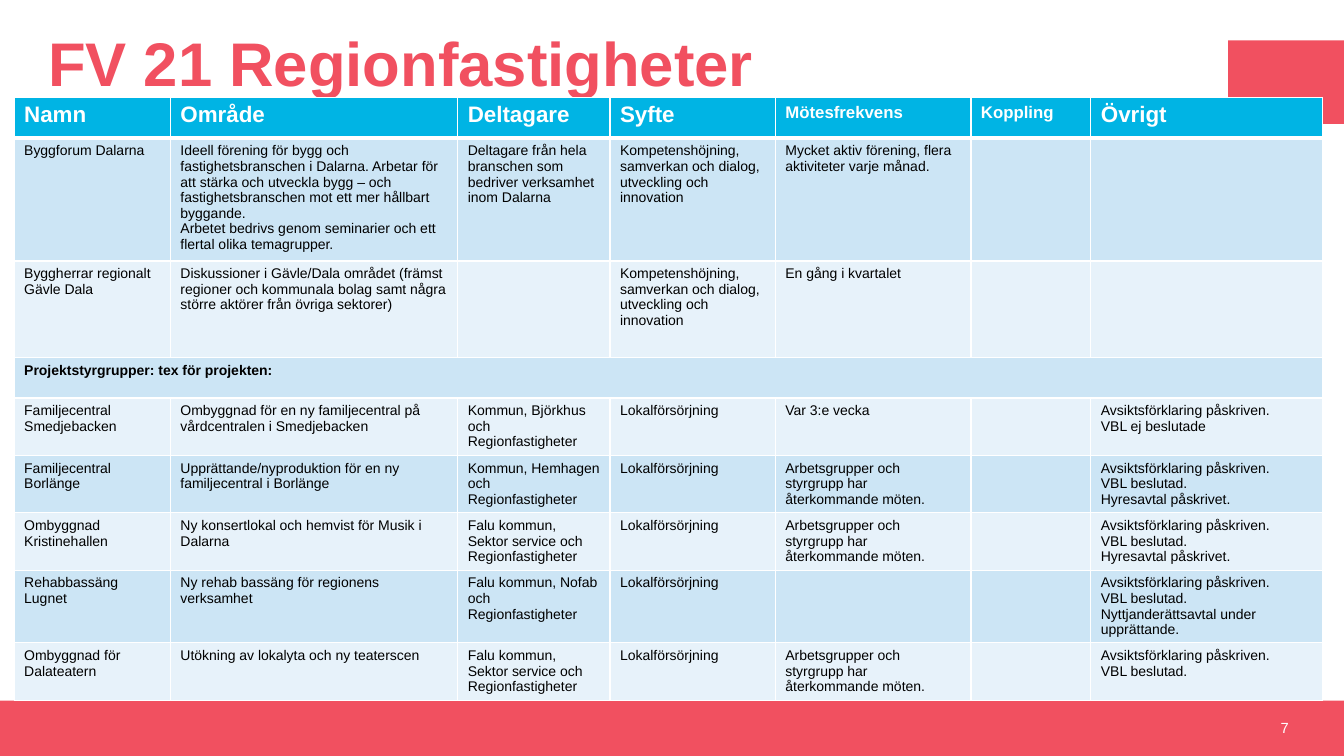
from dataclasses import dataclass
from typing import NamedTuple

from lxml.etree import SubElement
from pptx import Presentation
from pptx.dml.color import RGBColor
from pptx.enum.shapes import MSO_SHAPE
from pptx.enum.text import MSO_ANCHOR, PP_ALIGN
from pptx.oxml.ns import qn
from pptx.util import Inches, Pt


@dataclass(frozen=True)
class Theme:
    font: str = "Arial"
    coral: str = "F15060"
    header: str = "00B4E4"
    bands: tuple[str, str] = ("CCE5F5", "E7F2FA")
    white: str = "FFFFFF"
    black: str = "000000"
    title_size: float = 44
    header_size: float = 16
    small_header_size: float = 12
    body_size: float = 10
    number_size: float = 10.5


class Box(NamedTuple):
    left: float
    top: float
    width: float
    height: float

    def lengths(self) -> list:
        return [Inches(value) for value in self]


class Column(NamedTuple):
    heading: str
    width: float
    size: float


class Entry(NamedTuple):
    height: float
    texts: tuple[str, ...]
    is_section: bool = False


THEME = Theme()
SECTION_LABEL = "Projektstyrgrupper: tex för projekten:"
SKILLS = "Kompetenshöjning, samverkan och dialog, utveckling och innovation"
PREMISES = "Lokalförsörjning"
MEETINGS = "Arbetsgrupper och styrgrupp har återkommande möten."
SECTOR_SERVICE = "Falu kommun, Sektor service och Regionfastigheter"
SIGNED = "Avsiktsförklaring påskriven."
DECIDED = f"{SIGNED}\nVBL beslutad."
LEASED = f"{DECIDED}\nHyresavtal påskrivet."

BANDS = (Box(0, 6.95, 13.33, 0.55), Box(12.18, 0.4, 1.15, 0.83))
HEADER_HEIGHT = 0.4
PROJECT_HEIGHT = 0.57
PURPOSE_COLUMN = 3
COLUMNS = (
    Column("Namn", 1.55, THEME.header_size),
    Column("Område", 2.85, THEME.header_size),
    Column("Deltagare", 1.51, THEME.header_size),
    Column("Syfte", 1.64, THEME.header_size),
    Column("Mötesfrekvens", 1.94, THEME.small_header_size),
    Column("Koppling", 1.19, THEME.small_header_size),
    Column("Övrigt", 2.3, THEME.header_size),
)
ENTRIES = (
    Entry(1.19, (
        "Byggforum Dalarna",
        "Ideell förening för bygg och fastighetsbranschen i Dalarna. Arbetar för att stärka och "
        "utveckla bygg – och fastighetsbranschen mot ett mer hållbart byggande.\n"
        "Arbetet bedrivs genom seminarier och ett flertal olika temagrupper.",
        "Deltagare från hela branschen som bedriver verksamhet inom Dalarna",
        SKILLS, "Mycket aktiv förening, flera aktiviteter varje månad.", "", "")),
    Entry(0.96, (
        "Byggherrar regionalt Gävle Dala",
        "Diskussioner i Gävle/Dala området (främst regioner och kommunala bolag samt några "
        "större aktörer från övriga sektorer)",
        "", SKILLS, "En gång i kvartalet", "", "")),
    Entry(0.4, (SECTION_LABEL,), is_section=True),
    Entry(PROJECT_HEIGHT, (
        "Familjecentral Smedjebacken",
        "Ombyggnad för en ny familjecentral på vårdcentralen i Smedjebacken",
        "Kommun, Björkhus och Regionfastigheter",
        PREMISES, "Var 3:e vecka", "", f"{SIGNED}\nVBL ej beslutade")),
    Entry(PROJECT_HEIGHT, (
        "Familjecentral Borlänge",
        "Upprättande/nyproduktion för en ny familjecentral i Borlänge",
        "Kommun, Hemhagen och Regionfastigheter",
        PREMISES, MEETINGS, "", LEASED)),
    Entry(PROJECT_HEIGHT, (
        "Ombyggnad Kristinehallen",
        "Ny konsertlokal och hemvist för Musik i Dalarna",
        SECTOR_SERVICE, PREMISES, MEETINGS, "", LEASED)),
    Entry(0.72, (
        "Rehabbassäng Lugnet",
        "Ny rehab bassäng för regionens verksamhet",
        "Falu kommun, Nofab och Regionfastigheter",
        PREMISES, "", "", f"{DECIDED}\nNyttjanderättsavtal under upprättande.")),
    Entry(PROJECT_HEIGHT, (
        "Ombyggnad för Dalateatern",
        "Utökning av lokalyta och ny teaterscen",
        SECTOR_SERVICE, PREMISES, MEETINGS, "", DECIDED)),
)


def write(frame, text: str, size: float, color: str, bold: bool = False) -> None:
    frame.text = text
    for paragraph in frame.paragraphs:
        paragraph.font.name = THEME.font
        paragraph.font.size = Pt(size)
        paragraph.font.bold = bold
        paragraph.font.color.rgb = RGBColor.from_string(color)


def add_band(slide, box: Box) -> None:
    band = slide.shapes.add_shape(MSO_SHAPE.RECTANGLE, *box.lengths())
    band.shadow.inherit = False
    band.fill.solid()
    band.fill.fore_color.rgb = RGBColor.from_string(THEME.coral)
    band.line.fill.background()


def add_label(slide, box: Box, text: str, size: float, color: str, bold: bool = False):
    frame = slide.shapes.add_textbox(*box.lengths()).text_frame
    frame.word_wrap = True
    frame.vertical_anchor = MSO_ANCHOR.MIDDLE
    write(frame, text, size, color, bold)
    return frame.paragraphs[0]


def style_cell(cell, fill: str, bottom_width: float = 1) -> None:
    cell.margin_bottom = Inches(0)
    properties = cell._tc.get_or_add_tcPr()
    for side, width in (("L", 1), ("R", 1), ("T", 1), ("B", bottom_width)):
        border = SubElement(properties, qn(f"a:ln{side}"), w=str(Pt(width)))
        border_fill = SubElement(border, qn("a:solidFill"))
        SubElement(border_fill, qn("a:srgbClr"), val=THEME.white)
    cell.fill.solid()
    cell.fill.fore_color.rgb = RGBColor.from_string(fill)


def add_groups_table(slide) -> None:
    heights = [HEADER_HEIGHT, *(entry.height for entry in ENTRIES)]
    box = Box(0.14, 0.97, sum(column.width for column in COLUMNS), sum(heights))
    table = slide.shapes.add_table(len(heights), len(COLUMNS), *box.lengths()).table
    for row, height in zip(table.rows, heights):
        row.height = Inches(height)

    for index, column in enumerate(COLUMNS):
        table.columns[index].width = Inches(column.width)
        heading = table.cell(0, index)
        style_cell(heading, THEME.header, bottom_width=3)
        write(heading.text_frame, column.heading, column.size, THEME.white, bold=True)

    for row_index, entry in enumerate(ENTRIES, start=1):
        for index in range(len(COLUMNS)):
            style_cell(table.cell(row_index, index), THEME.bands[(row_index - 1) % 2])
        if entry.is_section:
            table.cell(row_index, 0).merge(table.cell(row_index, len(COLUMNS) - 1))
        for index, text in enumerate(entry.texts):
            frame = table.cell(row_index, index).text_frame
            write(frame, text, THEME.body_size, THEME.black, entry.is_section)
            if index == PURPOSE_COLUMN and 1 < row_index < len(ENTRIES):
                frame.paragraphs[0].space_after = Pt(6)


def main() -> None:
    presentation = Presentation()
    presentation.slide_width = Inches(13.33)
    presentation.slide_height = Inches(7.5)
    slide = presentation.slides.add_slide(presentation.slide_layouts[6])
    for band in BANDS:
        add_band(slide, band)
    title = add_label(slide, Box(0.38, 0, 11.61, 1.32), "FV 21 Regionfastigheter",
                      THEME.title_size, THEME.coral, bold=True)
    title.line_spacing = 0.9
    number = add_label(slide, Box(9.88, 6.95, 3, 0.54), "7", THEME.number_size, THEME.white)
    number.alignment = PP_ALIGN.RIGHT
    add_groups_table(slide)
    presentation.save("out.pptx")


if __name__ == "__main__":
    main()
